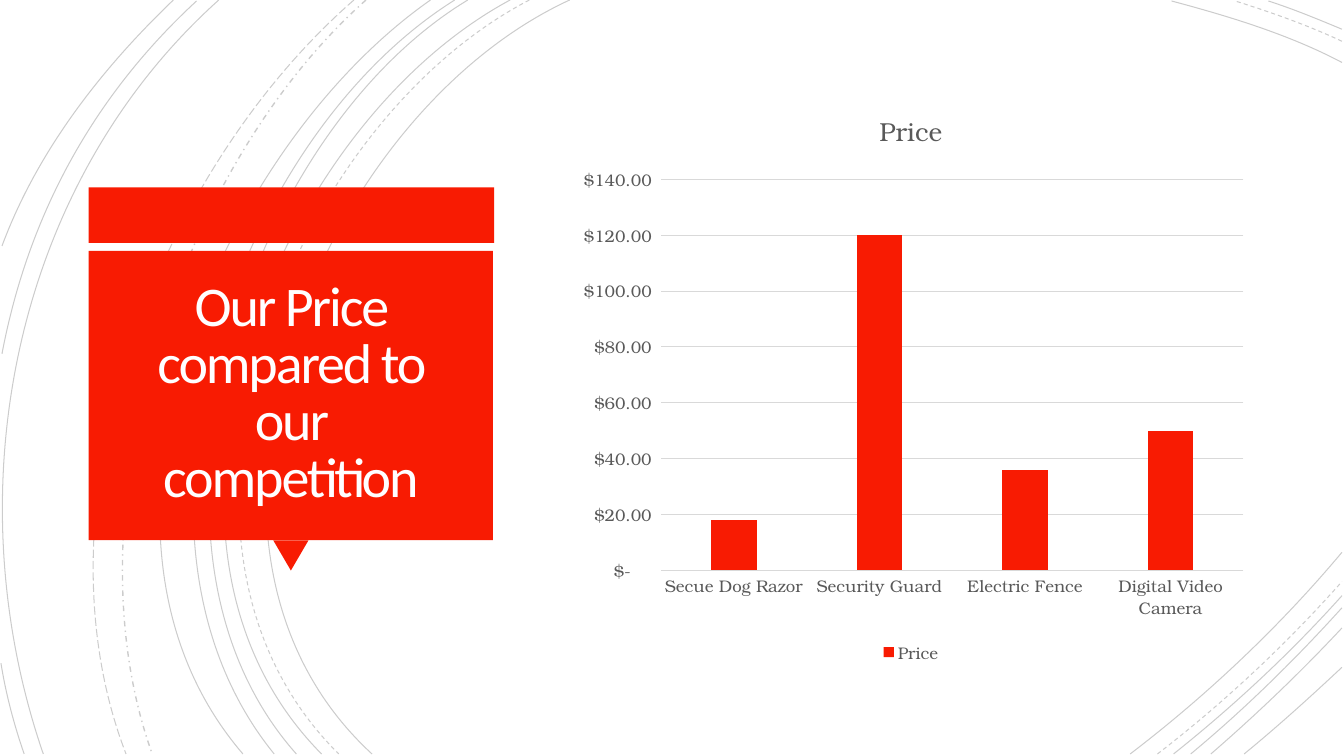
from dataclasses import dataclass

from lxml.etree import SubElement
from pptx import Presentation
from pptx.chart.data import CategoryChartData
from pptx.dml.color import RGBColor
from pptx.enum.chart import XL_CHART_TYPE as CHART, XL_LEGEND_POSITION as LEGEND
from pptx.enum.chart import XL_TICK_MARK as TICK
from pptx.enum.dml import MSO_LINE_DASH_STYLE as DASH
from pptx.enum.shapes import MSO_SHAPE as SHAPE
from pptx.enum.text import MSO_ANCHOR, MSO_AUTO_SIZE, PP_ALIGN
from pptx.oxml.ns import qn
from pptx.util import Inches, Pt


@dataclass(frozen=True)
class Theme:
    red: RGBColor = RGBColor.from_string("F81B02")
    white: RGBColor = RGBColor.from_string("FFFEFF")
    arc: RGBColor = RGBColor.from_string("000000")
    text: RGBColor = RGBColor.from_string("595959")
    grid: RGBColor = RGBColor.from_string("D9D9D9")
    head_font: str = "Calibri"
    body_font: str = "TeX Gyre Bonum"
    title: float = 40
    chart_title: float = 18.6
    label: float = 12


T = Theme()


def set_font(font, size=T.label, color=T.text, name=T.body_font):
    font.size, font.name, font.bold = Pt(size), name, False
    font.color.rgb = color


def write(tf, text, align=PP_ALIGN.CENTER, line_spacing=None, spacing=None, **fmt):
    p = tf.paragraphs[0]
    p.alignment = align
    p.line_spacing = line_spacing
    r = p.add_run()
    r.text = text
    set_font(r.font, **fmt)
    if spacing is not None:
        r.font._element.set("spc", str(int(spacing * 100)))


prs = Presentation()
prs.slide_width, prs.slide_height = Inches(13.33), Inches(7.5)
s = prs.slides.add_slide(prs.slide_layouts[5])

# Background arcs: four Bezier points each, then dash and width
SOLID, TOP, BOTTOM, RIGHT = DASH.SOLID, 0, 7.48, 13.31
left_arcs = [  # top x, two control points, bottom x
    (5.65, (3.15, 1.15), (1.43, 5.4), 3.69, SOLID, 0.75),
    (5.25, (2.85, 1.25), (1.23, 5.37), 3.36, DASH.DASH, 0.75),
    (5.06, (2.7, 1.27), (1.1, 5.37), 3.19, SOLID, 0.75),
    (4.64, (2.44, 1.33), (1.1, 5.41), 2.94, SOLID, 0.75),
    (4.51, (2.31, 1.38), (0.97, 5.33), 2.72, SOLID, 0.75),
    (4.27, (2.17, 1.47), (0.53, 5.29), 2.41, SOLID, 0.75),
    (3.63, (1.76, 1.66), (0.65, 5.09), 1.51, DASH.DASH_DOT, 1),
    (3.51, (1.57, 1.69), (0.29, 4.99), 1.25, DASH.LONG_DASH, 0.75),
    (2.17, (0.11, 1.85), (-0.46, 4.9), 0.43, SOLID, 0.75),
]
top_right_arcs = [  # right-edge y, two control points, top x
    (0.62, (12.78, 0.34), (12.18, 0.16), 11.62, SOLID),
    (0.41, (12.97, 0.25), (12.6, 0.12), 12.25, DASH.DASH),
    (0.29, (13.07, 0.19), (12.83, 0.09), 12.58, SOLID),
]
bottom_right_arcs = [  # bottom x, two control points, right-edge y
    (11.21, (11.97, 6.9), (12.69, 6.22), 5.48, SOLID),
    (11.48, (12.13, 6.98), (12.75, 6.4), 5.77, DASH.DASH),
    (11.64, (12.23, 7.01), (12.8, 6.48), 5.91, SOLID),
    (11.81, (12.34, 7.04), (12.84, 6.55), 6.03, SOLID),
    (12.01, (12.46, 7.09), (12.9, 6.67), 6.23, SOLID),
    (12.34, (12.67, 7.21), (12.99, 6.92), 6.62, SOLID),
]
edge_arcs = [
    ((1.95, 0.01), (0.92, 0.96), (0.28, 2.14), (0.02, 3.51)),
    ((0.01, 6.58), (0.06, 6.89), (0.14, 7.19), (0.24, BOTTOM)),
    ((1.72, TOP), (1, 0.69), (0.37, 1.5), (0.02, 2.44)),
]
arcs = [(((x0, TOP), c1, c2, (x1, BOTTOM)), d, w) for x0, c1, c2, x1, d, w in left_arcs]
arcs += [(((RIGHT, y), c1, c2, (x, 0.01)), d, 0.75) for y, c1, c2, x, d in top_right_arcs]
arcs += [(((x, BOTTOM), c1, c2, (RIGHT, y)), d, 0.75) for x, c1, c2, y, d in bottom_right_arcs]
arcs += [(points, SOLID, 0.75) for points in edge_arcs]

for points, dash, width in arcs:
    start, *rest = [(Inches(x), Inches(y)) for x, y in points]
    fb = s.shapes.build_freeform(*start)
    fb.add_line_segments(rest, close=False)
    sp = fb.convert_to_shape()
    sp.shadow.inherit = False
    sp.fill.background()
    sp.line.color.rgb = T.arc
    sp.line.width = Pt(width)
    sp.line.dash_style = dash
    # Turn the three segments into one cubic curve and make the line 20% opaque
    path = next(sp.element.iter(qn("a:path")))
    segments = path.findall(qn("a:lnTo"))
    curve = SubElement(path, qn("a:cubicBezTo"))
    for seg in segments:
        curve.append(seg[0])
        path.remove(seg)
    color = next(sp.element.spPr.find(qn("a:ln")).iter(qn("a:srgbClr")))
    SubElement(color, qn("a:alpha")).set("val", "20000")

# Red callout: bar, pointer and panel
for kind, box, angle in [
    (SHAPE.RECTANGLE, (0.88, 1.86, 4.02, 0.55), 0),
    (SHAPE.ISOSCELES_TRIANGLE, (2.71, 5.36, 0.35, 0.3), 180),
    (SHAPE.RECTANGLE, (0.88, 2.49, 4.01, 2.87), 0),
]:
    sp = s.shapes.add_shape(kind, *map(Inches, box))
    sp.rotation = angle
    sp.shadow.inherit = False
    sp.fill.solid()
    sp.fill.fore_color.rgb = T.red
    sp.line.fill.background()

# Title, brought in front of the callout
title = s.shapes.title
title.element.getparent().append(title.element)
title.left, title.top, title.width, title.height = map(Inches, (0.97, 2.57, 3.83, 2.69))
tf = title.text_frame
tf.word_wrap, tf.auto_size = True, MSO_AUTO_SIZE.NONE
tf.vertical_anchor = MSO_ANCHOR.MIDDLE
tf.margin_left = tf.margin_right = tf.margin_top = tf.margin_bottom = Inches(0.25)
write(tf, "Our Price compared to our competition", line_spacing=0.85, spacing=-1.5,
      size=T.title, color=T.white, name=T.head_font)

# Price chart
data = CategoryChartData()
data.categories = ["Secue Dog Razor", "Security Guard", "Electric Fence", "Digital Video Camera"]
data.add_series("Price", (18, 120, 36, 50))
box = map(Inches, (5.6, 0.88, 6.87, 5.74))
chart = s.shapes.add_chart(CHART.COLUMN_CLUSTERED, *box, data).chart
set_font(chart.font)
chart.has_title = True
write(chart.chart_title.text_frame, "Price", size=T.chart_title)
chart.chart_title.include_in_layout = False
chart.has_legend = True
chart.legend.position = LEGEND.BOTTOM
chart.legend.include_in_layout = False
set_font(chart.legend.font)

plot = chart.plots[0]
plot.gap_width, plot.overlap, plot.vary_by_categories = 219, -27, False
fill = plot.series[0].format.fill
fill.solid()
fill.fore_color.rgb = T.red

cat, val = chart.category_axis, chart.value_axis
for axis in (cat, val):
    axis.major_tick_mark = axis.minor_tick_mark = TICK.NONE
    set_font(axis.tick_labels.font)
val.minimum_scale, val.maximum_scale, val.major_unit = 0, 140, 20
val.has_major_gridlines = True
for line in (cat.format.line, val.major_gridlines.format.line):
    line.color.rgb = T.grid
    line.width = Pt(0.75)
val.format.line.fill.background()
val.tick_labels.number_format = '_("$"* #,##0.00_);_("$"* \\(#,##0.00\\);_("$"* "-"??_);_(@_)'
val.tick_labels.number_format_is_linked = False

prs.save("out.pptx")
